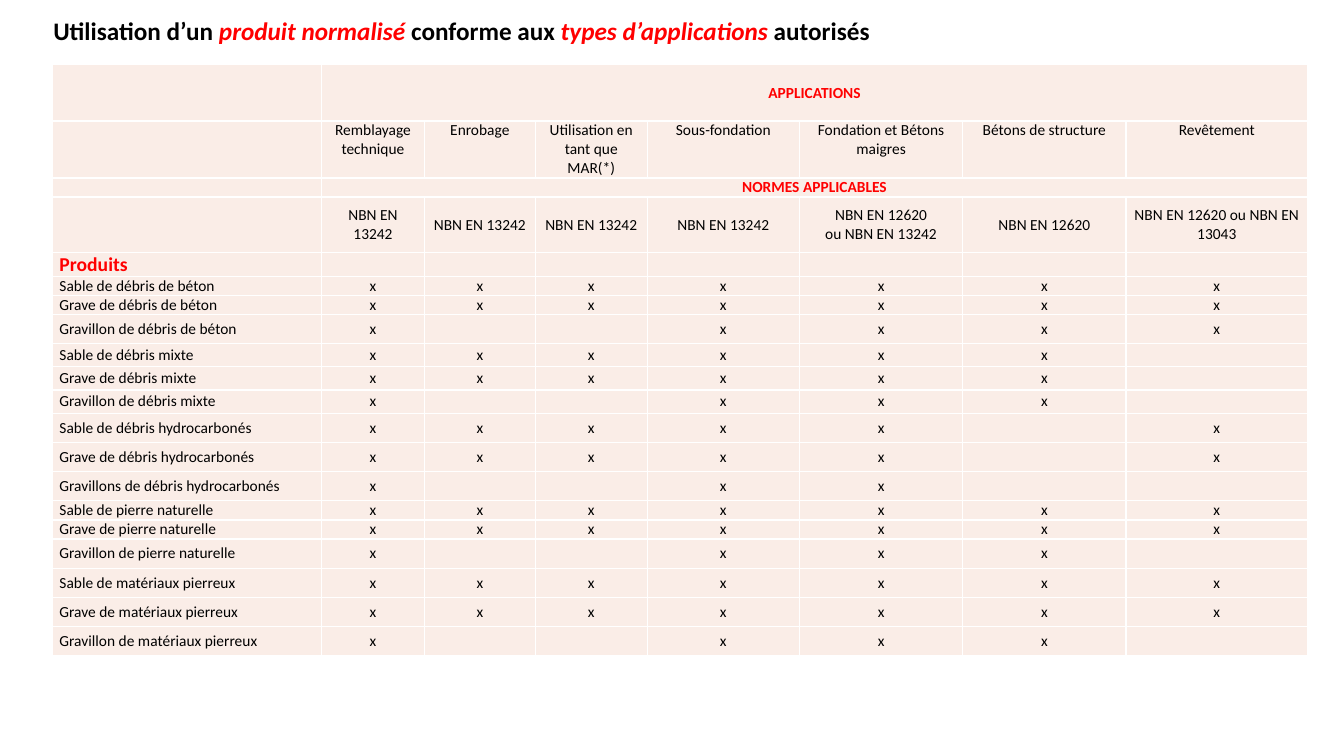
from lxml.etree import SubElement
from pptx import Presentation
from pptx.dml.color import RGBColor
from pptx.enum.text import MSO_ANCHOR as ANCHOR, MSO_AUTO_SIZE as AUTO, PP_ALIGN as ALIGN
from pptx.oxml.ns import qn
from pptx.util import Pt

PX = 9144
FONT = "Calibri"
BLACK = RGBColor(0x00, 0x00, 0x00)
RED = RGBColor(0xFF, 0x00, 0x00)
WHITE = RGBColor(0xFF, 0xFF, 0xFF)
CREAM = RGBColor(0xFA, 0xED, 0xE7)

COL_WIDTHS = [267, 102, 110, 111, 151, 162, 162, 180]
HEADER_HEIGHTS = [56, 53, 18, 55, 22]

TITLE = [
    ("Utilisation d’un ", False),
    ("produit normalisé", True),
    (" conforme aux ", False),
    ("types d’applications ", True),
    ("autorisés", False),
]
APPLICATIONS = [
    "Remblayage\ntechnique", "Enrobage", "Utilisation en tant que MAR(*)",
    "Sous-fondation", "Fondation et Bétons maigres", "Bétons de structure",
    "Revêtement",
]
NORMES = [
    "NBN EN 13242", "NBN EN 13242", "NBN EN 13242", "NBN EN 13242",
    "NBN EN 12620\nou NBN EN 13242", "NBN EN 12620",
    "NBN EN 12620 ou NBN EN 13043",
]
PRODUITS = [
    ("Sable de débris de béton", 18, "xxxxxxx"),
    ("Grave de débris de béton", 18, "xxxxxxx"),
    ("Gravillon de débris de béton", 29, "x--xxxx"),
    ("Sable de débris mixte", 23, "xxxxxx-"),
    ("Grave de débris mixte", 23, "xxxxxx-"),
    ("Gravillon de débris mixte", 23, "x--xxx-"),
    ("Sable de débris hydrocarbonés", 29, "xxxxx-x"),
    ("Grave de débris hydrocarbonés", 29, "xxxxx-x"),
    ("Gravillons de débris hydrocarbonés", 29, "x--xx--"),
    ("Sable de pierre naturelle", 18, "xxxxxxx"),
    ("Grave de pierre naturelle", 18, "xxxxxxx"),
    ("Gravillon de pierre naturelle", 29, "x--xxx-"),
    ("Sable de matériaux pierreux", 29, "xxxxxxx"),
    ("Grave de matériaux pierreux", 29, "xxxxxxx"),
    ("Gravillon de matériaux pierreux", 29, "x--xxx-"),
]


def style_run(r, size, color=BLACK, bold=False, italic=False):
    r.font.name = FONT
    r.font.size = Pt(size)
    r.font.color.rgb = color
    r.font.bold = bold
    r.font.italic = italic


def style_cell(cell):
    tc_pr = cell._tc.get_or_add_tcPr()
    for side in ("a:lnL", "a:lnR", "a:lnT", "a:lnB"):
        ln = SubElement(tc_pr, qn(side), w=str(Pt(1)))
        fill = SubElement(ln, qn("a:solidFill"))
        SubElement(fill, qn("a:srgbClr"), val=str(WHITE))
    cell.fill.solid()
    cell.fill.fore_color.rgb = CREAM
    cell.margin_left = cell.margin_right = 7 * PX
    cell.margin_top = cell.margin_bottom = 0
    end = cell.text_frame.paragraphs[0]._p.get_or_add_endParaRPr()
    end.set("sz", "1100")


def write_cell(cell, text, align=ALIGN.CENTER, anchor=ANCHOR.MIDDLE,
               size=11, color=BLACK, bold=False):
    cell.vertical_anchor = anchor
    cell.text_frame.text = text
    for p in cell.text_frame.paragraphs:
        p.alignment = align
        for r in p.runs:
            style_run(r, size, color, bold)


def write_band(table, row, text):
    table.cell(row, 1).merge(table.cell(row, len(COL_WIDTHS) - 1))
    write_cell(table.cell(row, 1), text, color=RED, bold=True)


def add_title(slide):
    sp = slide.shapes.add_textbox(43 * PX, 10 * PX, 925 * PX, 40 * PX)
    tf = sp.text_frame
    tf.word_wrap = True
    tf.auto_size = AUTO.SHAPE_TO_FIT_TEXT
    p = tf.paragraphs[0]
    p.alignment = ALIGN.JUSTIFY
    for text, accent in TITLE:
        r = p.add_run()
        r.text = text
        style_run(r, 18, RED if accent else BLACK, True, accent)


def add_products_table(slide):
    heights = HEADER_HEIGHTS + [height for _, height, _ in PRODUITS]
    table = slide.shapes.add_table(
        len(heights), len(COL_WIDTHS), 52 * PX, 64 * PX,
        sum(COL_WIDTHS) * PX, sum(heights) * PX).table
    table.first_row = table.horz_banding = False
    for column, width in zip(table.columns, COL_WIDTHS):
        column.width = width * PX
    for row, height in zip(table.rows, heights):
        row.height = height * PX
    for cell in table.iter_cells():
        style_cell(cell)

    write_band(table, 0, "APPLICATIONS")
    write_band(table, 2, "NORMES APPLICABLES")
    for col, (application, norme) in enumerate(zip(APPLICATIONS, NORMES), 1):
        write_cell(table.cell(1, col), application, anchor=ANCHOR.TOP)
        write_cell(table.cell(3, col), norme)
    write_cell(table.cell(4, 0), "Produits", ALIGN.LEFT, size=14, color=RED, bold=True)
    for row, (produit, _, marks) in enumerate(PRODUITS, len(HEADER_HEIGHTS)):
        write_cell(table.cell(row, 0), produit, ALIGN.LEFT)
        for col, mark in enumerate(marks, 1):
            if mark == "x":
                write_cell(table.cell(row, col), mark)


def main():
    prs = Presentation()
    prs.slide_width = 1333 * PX
    prs.slide_height = 750 * PX
    slide = prs.slides.add_slide(prs.slide_layouts[6])
    add_products_table(slide)
    add_title(slide)
    prs.save("out.pptx")


if __name__ == "__main__":
    main()
